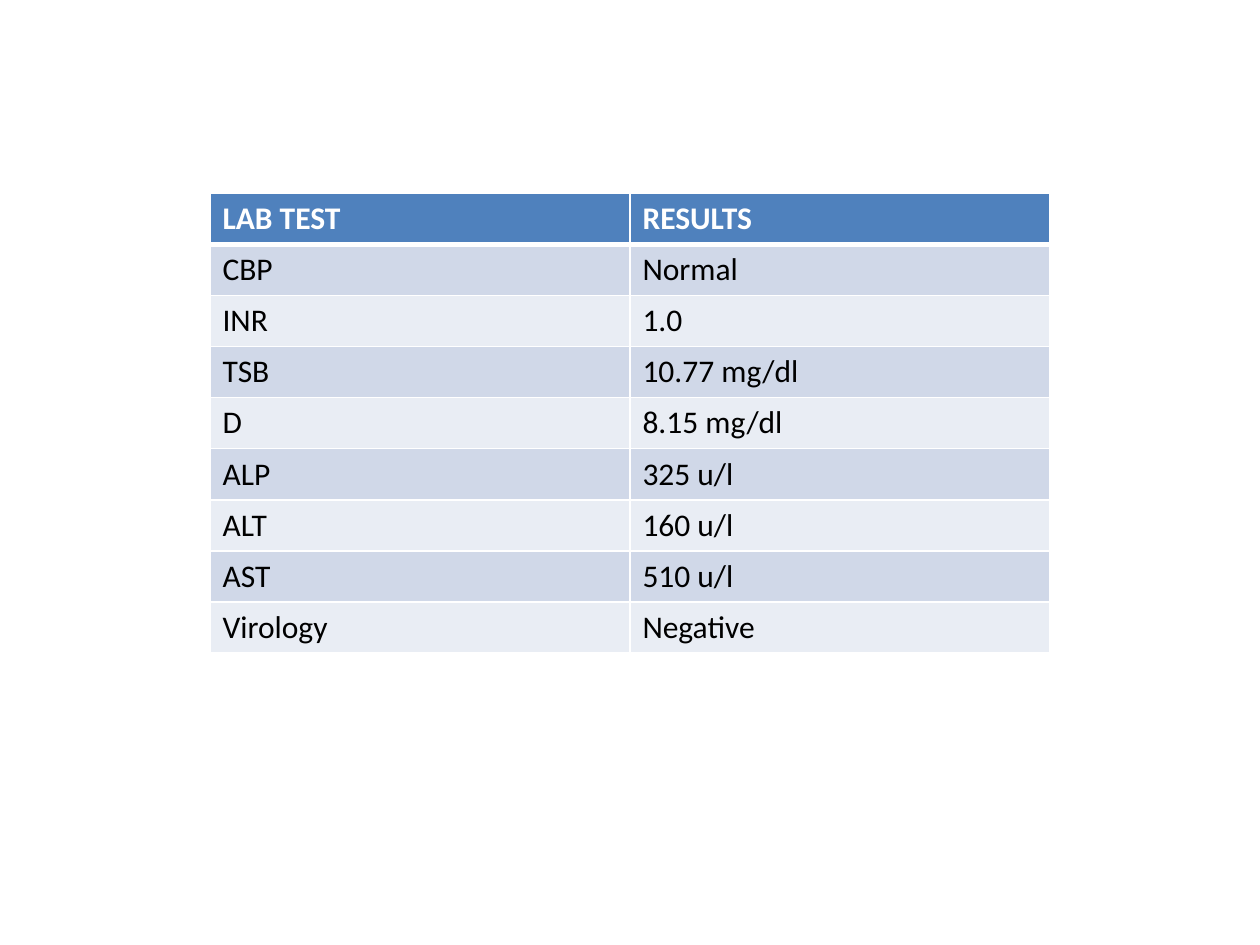
from lxml import etree
from pptx import Presentation
from pptx.dml.color import RGBColor
from pptx.oxml.ns import qn
from pptx.util import Pt

WHITE, BLACK, HEADER = "FFFFFF", "000000", "4F81BD"
BANDS = ("E9EDF4", "D0D8E8")  # even rows, odd rows
LAB_RESULTS = [
    ("LAB TEST", "RESULTS"),
    ("CBP", "Normal"),
    ("INR", "1.0"),
    ("TSB", "10.77 mg/dl"),
    ("D", "8.15 mg/dl"),
    ("ALP", "325 u/l"),
    ("ALT", "160 u/l"),
    ("AST", "510 u/l"),
    ("Virology", "Negative"),
]


def rgb(color):
    return RGBColor.from_string(color)


def set_borders(cell, top, bottom):
    """White borders; widths in points, 1 pt at the sides."""
    tcPr = cell._tc.get_or_add_tcPr()
    for side, width in (("L", 1), ("R", 1), ("T", top), ("B", bottom)):
        ln = etree.SubElement(tcPr, qn(f"a:ln{side}"), w=str(Pt(width)))
        fill = etree.SubElement(ln, qn("a:solidFill"))
        etree.SubElement(fill, qn("a:srgbClr"), val=WHITE)


def fill_cell(cell, value, row):
    is_header = row == 0
    # A thick rule separates the header from the body
    set_borders(cell, top=3 if row == 1 else 1, bottom=3 if is_header else 1)
    cell.fill.solid()
    cell.fill.fore_color.rgb = rgb(HEADER if is_header else BANDS[row % 2])
    p = cell.text_frame.paragraphs[0]
    p.text = value
    for r in p.runs:
        r.font.name = "Calibri"
        r.font.size = Pt(18)
        r.font.bold = is_header
        r.font.color.rgb = rgb(WHITE if is_header else BLACK)


def add_results_table(s, rows, left, top, col_width, row_height):
    n_rows, n_cols = len(rows), len(rows[0])
    table = s.shapes.add_table(
        n_rows, n_cols, Pt(left), Pt(top),
        Pt(col_width * n_cols), Pt(row_height * n_rows)).table
    for i, values in enumerate(rows):
        for j, value in enumerate(values):
            fill_cell(table.cell(i, j), value, i)


def main():
    prs = Presentation()
    prs.slide_width, prs.slide_height = Pt(720), Pt(540)
    s = prs.slides.add_slide(prs.slide_layouts[6])

    # Lab results, centred across the slide
    add_results_table(s, LAB_RESULTS, left=120, top=110.4,
                      col_width=240, row_height=29.2)
    prs.save("out.pptx")


if __name__ == "__main__":
    main()
